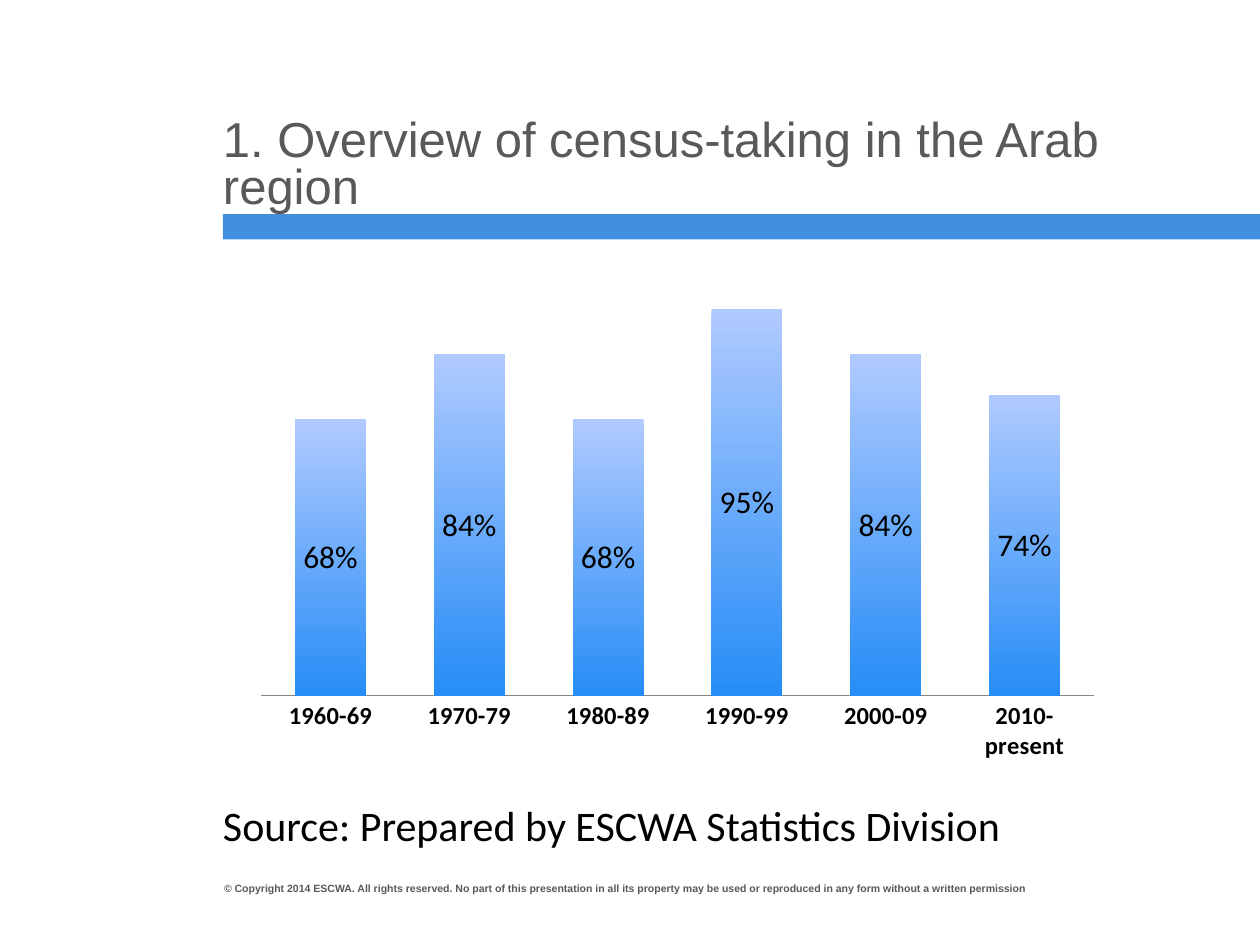
from lxml import etree
from pptx import Presentation
from pptx import util as u
from pptx.chart.data import CategoryChartData
from pptx.dml.color import RGBColor
from pptx.enum import chart as ch, shapes
from pptx.oxml import parse_xml

HEX = {"bar": "418FDE", "grey": "595959", "ink": "000000",
       "light": "B0CAFF", "deep": "268DF6", "axis": "868686"}
C = {name: RGBColor.from_string(code) for name, code in HEX.items()}
NS = "http://schemas.openxmlformats.org/drawingml/2006/chart"

deck = Presentation()
deck.slide_width, deck.slide_height = u.Inches(10), u.Inches(7.5)
slide = deck.slides.add_slide(deck.slide_layouts[6])
LEFT, WIDE = 1.77, 7.24


def put(words, box, font, size, tone, lead=None, bold=False, inset=0):
    """Add a one-paragraph text box; lead is the line height in points."""
    frame = slide.shapes.add_textbox(*map(u.Inches, box)).text_frame
    frame.word_wrap = True
    frame.margin_left = frame.margin_right = u.Inches(inset)
    frame.margin_top = frame.margin_bottom = u.Inches(inset / 2)
    para = frame.paragraphs[0]
    if lead:
        para.line_spacing = u.Pt(lead)
    run = para.add_run()
    run.text = words
    run.font.name, run.font.size, run.font.bold = font, u.Pt(size), bold
    run.font.color.rgb = C[tone]


# Rule under the title, running to the right edge
rule = slide.shapes.add_shape(shapes.MSO_SHAPE.RECTANGLE, u.Inches(LEFT),
                              u.Inches(1.7), u.Inches(10 - LEFT), u.Inches(0.2))
rule.shadow.inherit = False
rule.fill.solid()
rule.fill.fore_color.rgb = C["bar"]
rule.line.fill.background()

put("© Copyright 2014 ESCWA. All rights reserved. No part of this presentation "
    "in all its property may be used or reproduced in any form without a "
    "written permission",
    (1.68, 6.95, 7.74, 0.21), "Arial", 6, "grey", bold=True, inset=0.1)
put("1. Overview of census-taking in the Arab region",
    (LEFT, 0.95, WIDE, 0.62), "Arial", 28, "grey", lead=27)
put("Source: Prepared by ESCWA Statistics Division",
    (LEFT, 6.36, WIDE, 0.39), "Calibri", 24, "ink", lead=28)

# Share of countries by census round
data = CategoryChartData(number_format="0%")
data.categories = ["1960-69", "1970-79", "1980-89",
                   "1990-99", "2000-09", "2010-present"]
data.add_series("Series 1", (0.68, 0.84, 0.68, 0.95, 0.84, 0.74))
chart = slide.shapes.add_chart(
    ch.XL_CHART_TYPE.COLUMN_STACKED, u.Inches(1.84), u.Inches(1.99),
    u.Inches(7.04), u.Inches(4.22), data).chart
chart.has_legend = chart.has_title = False
chart.font.name, chart.font.size = "Calibri", u.Pt(18)
chart.font.color.rgb = C["ink"]

rounds = chart.category_axis
rounds.major_tick_mark = ch.XL_TICK_MARK.NONE
rounds.tick_labels.font.size = u.Pt(14)
rounds.tick_labels.font.bold = True
rounds.format.line.color.rgb = C["axis"]
rounds.format.line.width = u.Pt(0.75)

share = chart.value_axis
share.minimum_scale, share.maximum_scale = 0, 1
share.has_major_gridlines = False
share.visible = False

plot = chart.plots[0]
plot.gap_width, plot.overlap = 95, 100
plot.vary_by_categories = False
plot.has_data_labels = True
tags = plot.data_labels
tags.show_value = True
tags.number_format, tags.number_format_is_linked = "0%", False
tags.position = ch.XL_LABEL_POSITION.CENTER
tags.font.size = u.Pt(18)

fill = plot.series[0].format.fill
fill.gradient()
fill.gradient_angle = 270
for stop, tone in zip(fill.gradient_stops, ("light", "deep")):
    stop.color.rgb = C[tone]

# Fixed inner plot area, as shares of the chart
area = chart._chartSpace.find(f".//{{{NS}}}plotArea")
for old in area.findall(f"{{{NS}}}layout"):
    area.remove(old)
layout = parse_xml(f'<c:layout xmlns:c="{NS}"><c:manualLayout/></c:layout>')
marks = {"layoutTarget": "inner", "xMode": "edge", "yMode": "edge",
         "x": 0.033, "y": 0.072, "w": 0.939, "h": 0.765}
for tag, val in marks.items():
    etree.SubElement(layout[0], f"{{{NS}}}{tag}", val=str(val))
area.insert(0, layout)

deck.save("out.pptx")
